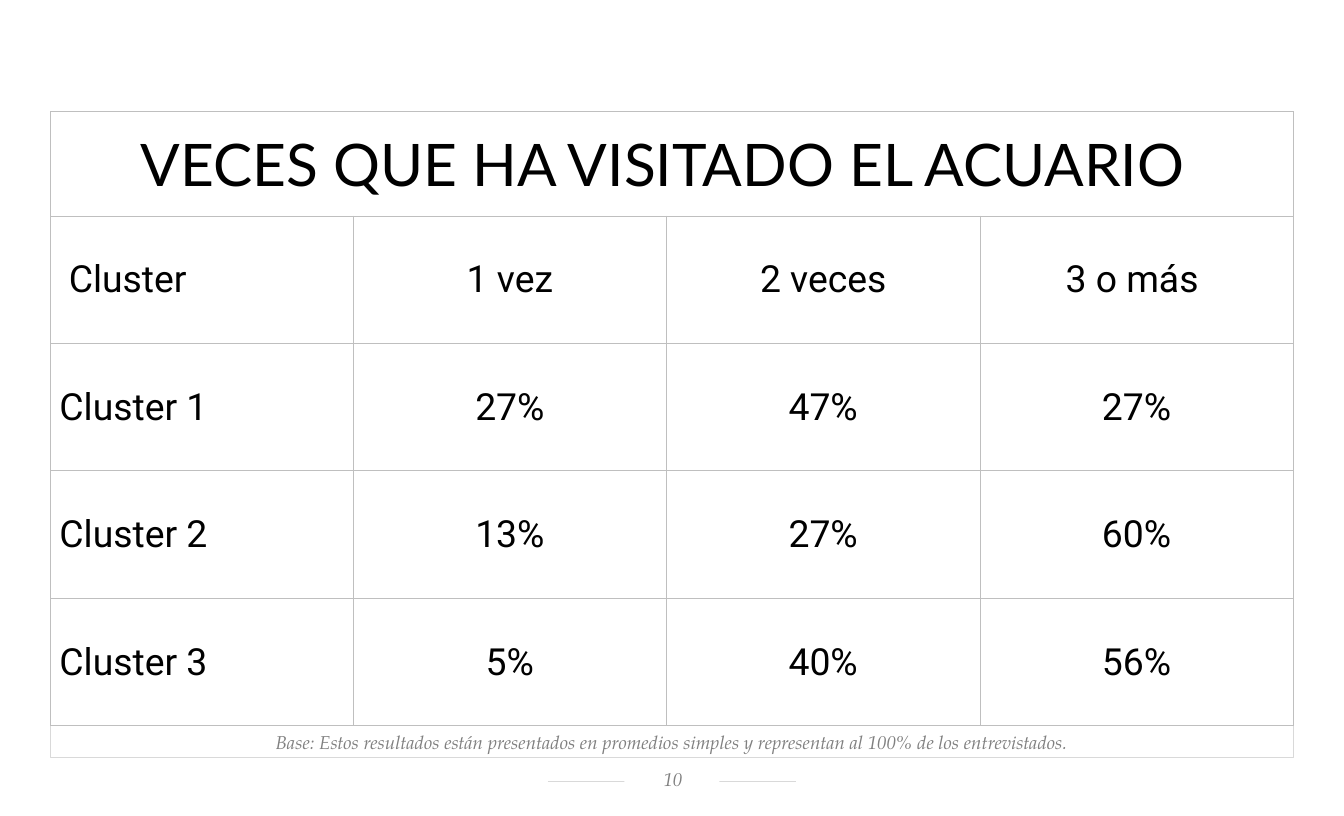
from lxml import etree
from pptx import Presentation
from pptx.dml.color import RGBColor
from pptx.enum.shapes import MSO_CONNECTOR, MSO_SHAPE
from pptx.enum.text import MSO_ANCHOR as Anchor, PP_ALIGN as Align
from pptx.oxml import parse_xml
from pptx.oxml.ns import nsdecls, qn
from pptx.util import Pt

WHITE = RGBColor(0xFF, 0xFF, 0xFF)
BLACK = RGBColor(0x00, 0x00, 0x00)
GREY = RGBColor(0x80, 0x80, 0x80)
RULE = RGBColor(0xD9, 0xD9, 0xD9)
BORDER = RGBColor(0xBF, 0xBF, 0xBF)

TITLE = "VECES QUE HA VISITADO EL ACUARIO"
ROWS = [
    ["Cluster", "1 vez", "2 veces", "3 o más"],
    ["Cluster 1", "27%", "47%", "27%"],
    ["Cluster 2", "13%", "27%", "60%"],
    ["Cluster 3", "5%", "40%", "56%"],
]
NOTE = ("Base: Estos resultados están presentados en promedios simples "
        "y representan al 100% de los entrevistados.")


def style_paragraph(paragraph, font_name, size, color, align, italic=False):
    paragraph.alignment = align
    font = paragraph.font
    font.name, font.size, font.italic = font_name, Pt(size), italic
    font.color.rgb = color


def set_borders(cell):
    properties = cell._tc.get_or_add_tcPr()
    for index, side in enumerate(("lnL", "lnR", "lnT", "lnB")):
        properties.insert(index, parse_xml(
            f'<a:{side} {nsdecls("a")} w="{Pt(0.5)}"><a:solidFill>'
            f'<a:srgbClr val="{BORDER}"/></a:solidFill></a:{side}>'))


def fill_cell(cell, text, font_name, size, align, left=0.75, right=0.75):
    cell.text = text
    cell.vertical_anchor = Anchor.MIDDLE
    cell.margin_left, cell.margin_right = Pt(left), Pt(right)
    cell.margin_top, cell.margin_bottom = Pt(0.75), Pt(0)
    style_paragraph(cell.text_frame.paragraphs[0], font_name, size, BLACK, align)


def add_visits_table(slide, left, top, width, height):
    row_count, column_count = len(ROWS) + 1, len(ROWS[0])
    table = slide.shapes.add_table(
        row_count, column_count, Pt(left), Pt(top), Pt(width), Pt(height)).table
    table.first_row = table.horz_banding = False

    # Title row and label column differ; the rest is an even grid
    title_height, label_width = 78.4, 226.8
    for index, row in enumerate(table.rows):
        row.height = Pt((height - title_height) / len(ROWS) if index else title_height)
    for index, column in enumerate(table.columns):
        column.width = Pt((width - label_width) / (column_count - 1) if index else label_width)
    for cell in table.iter_cells():
        cell.fill.background()
        set_borders(cell)

    # Title across all columns
    title_cell = table.cell(0, 0)
    title_cell.merge(table.cell(0, column_count - 1))
    fill_cell(title_cell, TITLE, "Lato", 44, Align.CENTER, right=14)

    # Header and values
    for row_index, values in enumerate(ROWS, start=1):
        for column_index, text in enumerate(values):
            cell = table.cell(row_index, column_index)
            is_header = row_index == 1
            if column_index == 0:
                fill_cell(cell, text, "Roboto", 28, Align.LEFT, left=13.5 if is_header else 6.5)
            else:
                is_last_header = is_header and column_index == column_count - 1
                fill_cell(cell, text, "Roboto", 28, Align.CENTER, right=7.5 if is_last_header else 0.75)


def add_caption(slide, text, left, top, width, height, anchor):
    shape = slide.shapes.add_shape(
        MSO_SHAPE.RECTANGLE, Pt(left), Pt(top), Pt(width), Pt(height))
    shape.shadow.inherit = False
    shape.fill.solid()
    shape.fill.fore_color.rgb = WHITE
    shape.line.fill.background()
    frame = shape.text_frame
    frame.word_wrap = True
    frame.vertical_anchor = anchor
    frame.text = text
    style_paragraph(frame.paragraphs[0], "TeX Gyre Pagella", 14, GREY, Align.CENTER, italic=True)
    return shape


def add_base_note(slide, left, top, width, height):
    note = add_caption(slide, NOTE, left, top, width, height, Anchor.BOTTOM)
    note.line.color.rgb = RULE
    note.line.width = Pt(0.75)


def add_page_number(slide, left, top, width, height):
    # Rule behind the number
    middle = Pt(top + height / 2)
    rule = slide.shapes.add_connector(
        MSO_CONNECTOR.STRAIGHT, Pt(left), middle, Pt(left + width), middle)
    rule.line.color.rgb = RULE
    rule.line.width = Pt(0.5)
    etree.SubElement(rule._element.spPr, qn("a:effectLst"))

    # White box that interrupts the rule
    number_width = 71.3
    number = add_caption(slide, "10", left + (width - number_width) / 2, top - 1,
                         number_width, height, Anchor.MIDDLE)
    frame = number.text_frame
    frame.margin_left, frame.margin_right = Pt(8.6), Pt(7.2)
    frame.margin_top, frame.margin_bottom = Pt(1.4), Pt(3.6)


def main():
    presentation = Presentation()
    presentation.slide_width, presentation.slide_height = Pt(1008), Pt(612)
    slide = presentation.slides.add_slide(presentation.slide_layouts[6])
    left, width = 38.1, 931.8
    add_page_number(slide, 411, 575.6, 186, 20.9)
    add_base_note(slide, left, 544.3, width, 24.2)
    add_visits_table(slide, left, 83.5, width, 460.8)
    presentation.save("out.pptx")


if __name__ == "__main__":
    main()
